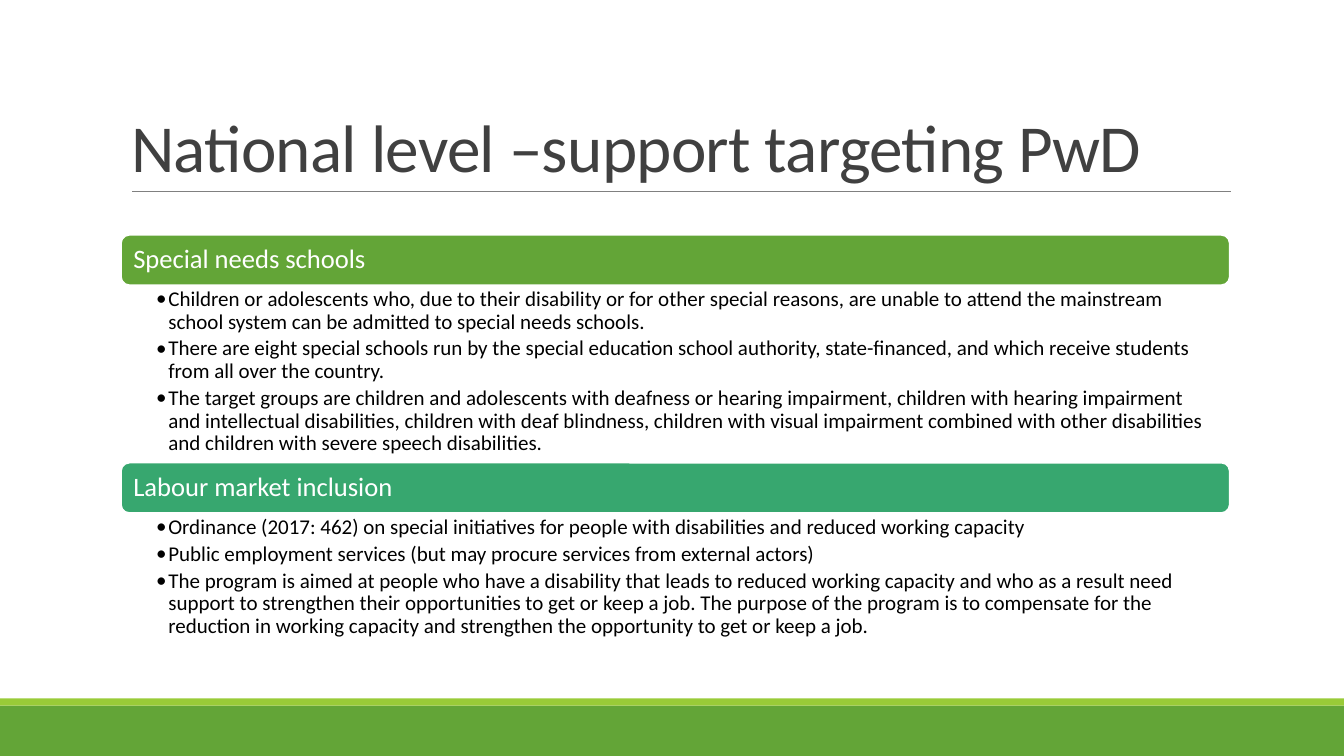
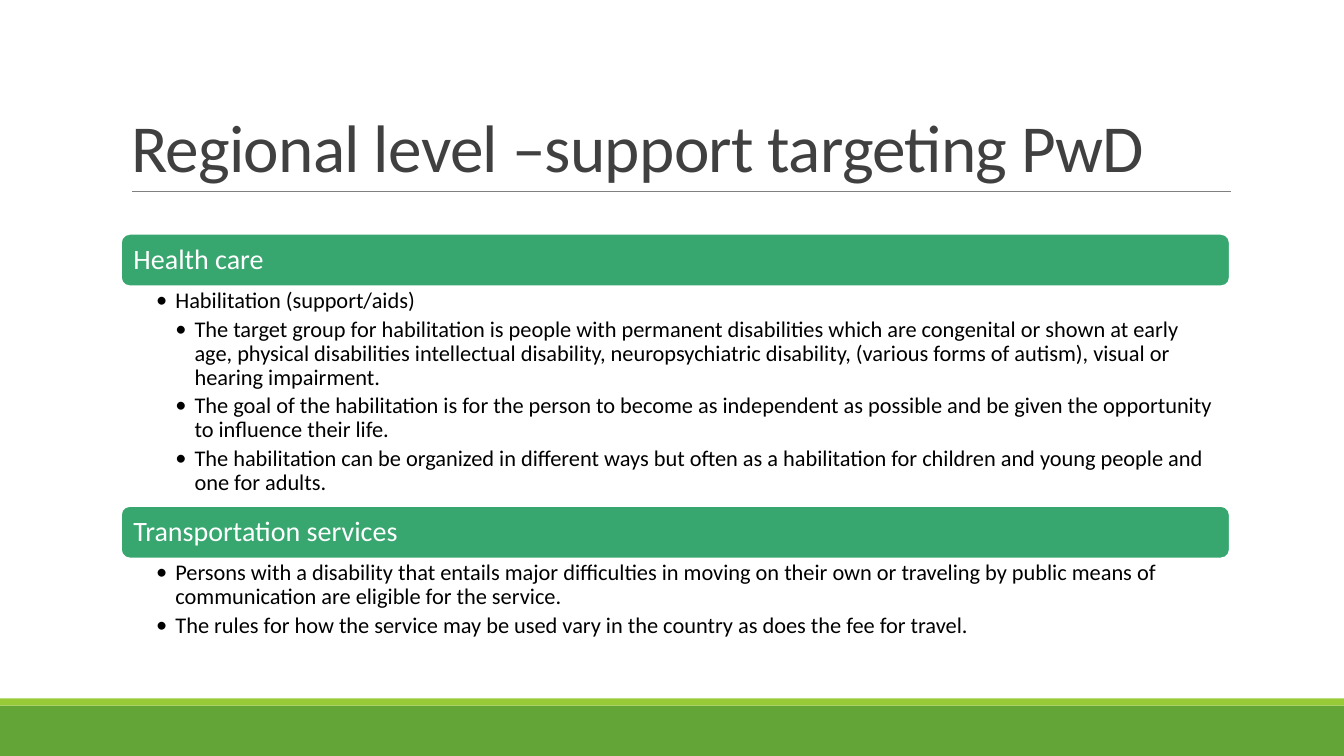
from lxml.etree import SubElement
from pptx import Presentation
from pptx.dml.color import RGBColor
from pptx.enum.shapes import MSO_CONNECTOR as Link, MSO_SHAPE as Form
from pptx.enum.text import MSO_ANCHOR as Anchor, MSO_AUTO_SIZE as Fit, PP_ALIGN as Align
from pptx.oxml.ns import qn
from pptx.util import Inches, Pt

WIDE, HIGH = 13.33, 7.5
LEFT, SPAN = 0.09 * WIDE, 0.825 * WIDE
FONT = "Calibri"
HEX = {
    "green": "63A537",
    "lime": "99CB38",
    "teal": "37A76F",
    "grey": "808080",
    "dark": "404040",
    "white": "FFFFFF",
    "black": "000000",
}

PAGES = [
    {
        "title": "National level –support targeting PwD",
        "top": 2.33, "bar": 0.5, "head": 19, "size": 15, "step": 0.12,
        "parts": [
            ("Special needs schools", "green", 1.76, [
                (1, "Children or adolescents who, due to their disability or for other special reasons, are unable to attend the mainstream school system can be admitted to special needs schools."),
                (1, "There are eight special schools run by the special education school authority, state-financed, and which receive students from all over the country."),
                (1, "The target groups are children and adolescents with deafness or hearing impairment, children with hearing impairment and intellectual disabilities, children with deaf blindness, children with visual impairment combined with other disabilities and children with severe speech disabilities."),
            ]),
            ("Labour market inclusion", "teal", 1.31, [
                (1, "Ordinance (2017: 462) on special initiatives for people with disabilities and reduced working capacity"),
                (1, "Public employment services (but may procure services from external actors)"),
                (1, "The program is aimed at people who have a disability that leads to reduced working capacity and who as a result need support to strengthen their opportunities to get or keep a job. The purpose of the program is to compensate for the reduction in working capacity and strengthen the opportunity to get or keep a job."),
            ]),
        ],
    },
    {
        "title": "Regional level –support targeting PwD",
        "top": 2.32, "bar": 0.52, "head": 20, "size": 16, "step": 0.19,
        "parts": [
            ("Health care", "teal", 2.18, [
                (1, "Habilitation (support/aids)"),
                (2, "The target group for habilitation is people with permanent disabilities which are congenital or shown at early age, physical disabilities intellectual disability, neuropsychiatric disability, (various forms of autism), visual or hearing impairment."),
                (2, "The goal of the habilitation is for the person to become as independent as possible and be given the opportunity to influence their life."),
                (2, "The habilitation can be organized in different ways but often as a habilitation for children and young people and one for adults."),
            ]),
            ("Transportation services", "teal", 0.86, [
                (1, "Persons with a disability that entails major difficulties in moving on their own or traveling by public means of communication are eligible for the service."),
                (1, "The rules for how the service may be used vary in the country as does the fee for travel."),
            ]),
        ],
    },
]


def tint(name):
    return RGBColor.from_string(HEX[name])


def inch(*box):
    return [Inches(x) for x in box]


def write(frame, items, size, color, pads, anchor=Anchor.TOP, lead=0.9, after=0, step=0, track=0):
    frame.word_wrap = True
    frame.auto_size = Fit.NONE
    frame.vertical_anchor = anchor
    frame.margin_left, frame.margin_top, frame.margin_right, frame.margin_bottom = inch(*pads)
    for i, (level, text) in enumerate(items):
        para = frame.add_paragraph() if i else frame.paragraphs[0]
        para.alignment = Align.LEFT
        para.line_spacing = lead
        para.space_before, para.space_after = Pt(0), Pt(after)
        run = para.add_run()
        run.text = text
        run.font.name, run.font.size = FONT, Pt(size)
        run.font.color.rgb = tint(color)
        if track:
            run.font._element.set("spc", str(int(track * 100)))
        if level:
            para.level = level
            props = para._p.get_or_add_pPr()
            props.set("marL", str(Inches(level * step)))
            props.set("indent", str(-Inches(step)))
            SubElement(props, qn("a:buFont")).set("typeface", FONT)
            SubElement(props, qn("a:buChar")).set("char", "•")


def block(slide, form, box, fill, line=None):
    shape = slide.shapes.add_shape(form, *inch(*box))
    shape.shadow.inherit = False
    shape.fill.solid()
    shape.fill.fore_color.rgb = tint(fill)
    if line:
        shape.line.color.rgb = tint(line)
        shape.line.width = Pt(1.25)
    else:
        shape.line.fill.background()
    return shape


def frame(slide, title):
    block(slide, Form.RECTANGLE, (0, 7, WIDE, 0.5), "green")
    block(slide, Form.RECTANGLE, (0, 6.93, WIDE, 0.07), "lime")
    rule = slide.shapes.add_connector(Link.STRAIGHT, *inch(1.31, 1.9, 12.21, 1.9))
    rule.line.color.rgb = tint("grey")
    rule.line.width = Pt(0.5)
    SubElement(rule._element.spPr, qn("a:effectLst"))
    head = slide.shapes.title
    head.left, head.top, head.width, head.height = inch(LEFT, 0.31, SPAN, 1.59)
    write(head.text_frame, [(0, title)], 48, "dark", (0.1, 0.05, 0.1, 0.05),
          anchor=Anchor.BOTTOM, lead=0.85, track=-0.5)


def part(slide, box, page, head, color, items):
    left, top, width, height = box
    bar = page["bar"]
    strip = block(slide, Form.ROUNDED_RECTANGLE, (left, top, width, bar), color, "white")
    write(strip.text_frame, [(0, head)], page["head"], "white", (0.1, 0.05, 0.1, 0.05),
          anchor=Anchor.MIDDLE)
    body = slide.shapes.add_textbox(*inch(left, top + bar, width, height - bar))
    write(body.text_frame, items, page["size"], "black", (0.35, 0.03, 0.15, 0.03),
          after=3, step=page["step"])


def build(deck, page):
    slide = deck.slides.add_slide(deck.slide_layouts[5])
    frame(slide, page["title"])
    top = page["top"]
    for head, color, depth, items in page["parts"]:
        high = page["bar"] + depth
        part(slide, (LEFT, top, SPAN, high), page, head, color, items)
        top += high


def main():
    deck = Presentation()
    deck.slide_width, deck.slide_height = inch(WIDE, HIGH)
    for page in PAGES:
        build(deck, page)
    deck.save("out.pptx")


if __name__ == "__main__":
    main()
